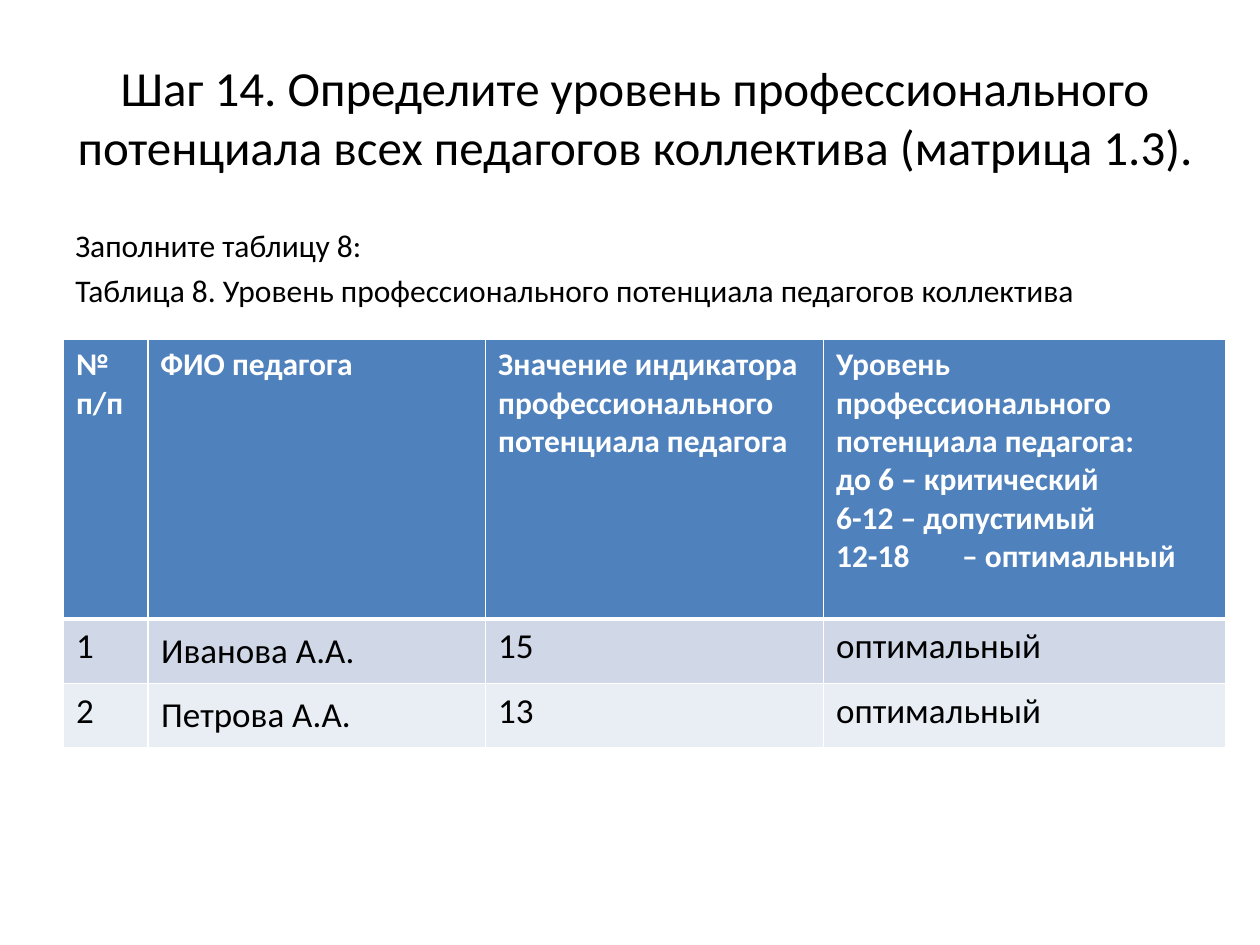
from lxml.etree import SubElement
from pptx import Presentation
from pptx.dml.color import RGBColor
from pptx.enum.text import MSO_ANCHOR, PP_ALIGN
from pptx.oxml.ns import qn
from pptx.util import Cm, Pt

FONT = "Calibri"
BLACK = RGBColor(0x00, 0x00, 0x00)
WHITE = RGBColor(0xFF, 0xFF, 0xFF)
HEADER_BLUE = RGBColor(0x4F, 0x81, 0xBD)
BAND_DARK = RGBColor(0xD0, 0xD8, 0xE8)
BAND_LIGHT = RGBColor(0xE9, 0xED, 0xF4)

TITLE = ("Шаг 14. Определите уровень профессионального "
         "потенциала всех педагогов коллектива (матрица 1.3).")
INTRO = [
    "Заполните таблицу 8:",
    "Таблица 8. Уровень профессионального потенциала педагогов коллектива",
]
HEADER = [
    "№ п/п",
    "ФИО педагога",
    "Значение индикатора профессионального потенциала педагога",
    "Уровень профессионального потенциала педагога:\n"
    "до 6 – критический\n6-12 – допустимый\n12-18\t– оптимальный",
]
TEACHERS = [
    ["1", "Иванова А.А.", "15", "оптимальный"],
    ["2", "Петрова А.А.", "13", "оптимальный"],
]
NAME_COLUMN = 1
COLUMN_WIDTHS = [Cm(1.7), Cm(6.81), Cm(6.81), Cm(8.1)]
HEADER_HEIGHT = Cm(5.64)
ROW_HEIGHT = Cm(1.3)


def style_paragraphs(text_frame, size, color, bold=False):
    for paragraph in text_frame.paragraphs:
        paragraph.font.name = FONT
        paragraph.font.size = Pt(size)
        paragraph.font.bold = bold
        paragraph.font.color.rgb = color


def add_text(slide, box, text, size):
    text_frame = slide.shapes.add_textbox(*box).text_frame
    text_frame.word_wrap = True
    text_frame.text = text
    style_paragraphs(text_frame, size, BLACK)
    return text_frame


def add_title(slide, box):
    text_frame = add_text(slide, box, TITLE, 28)
    text_frame.vertical_anchor = MSO_ANCHOR.MIDDLE
    text_frame.paragraphs[0].alignment = PP_ALIGN.CENTER


def add_intro(slide, box):
    text_frame = add_text(slide, box, "\n".join(INTRO), 18)
    for paragraph in text_frame.paragraphs:
        paragraph.space_before = Pt(3.6)


def set_borders(cell, bottom_width):
    """White lines on all four sides, placed before the cell's fill."""
    properties = cell._tc.get_or_add_tcPr()
    widths = {"a:lnL": 1, "a:lnR": 1, "a:lnT": 1, "a:lnB": bottom_width}
    for position, (tag, width) in enumerate(widths.items()):
        line = SubElement(properties, qn(tag), w=str(Pt(width)))
        fill = SubElement(line, qn("a:solidFill"))
        SubElement(fill, qn("a:srgbClr"), val=str(WHITE))
        properties.insert(position, line)


def add_level_table(slide, left, top):
    rows = [HEADER] + TEACHERS
    height = HEADER_HEIGHT + ROW_HEIGHT * len(TEACHERS)
    table = slide.shapes.add_table(
        len(rows), len(HEADER), left, top, sum(COLUMN_WIDTHS), height).table
    for column, width in zip(table.columns, COLUMN_WIDTHS):
        column.width = width

    for row_index, texts in enumerate(rows):
        is_header = row_index == 0
        table.rows[row_index].height = HEADER_HEIGHT if is_header else ROW_HEIGHT
        band = BAND_DARK if row_index % 2 else BAND_LIGHT
        for column_index, text in enumerate(texts):
            cell = table.cell(row_index, column_index)
            cell.text = text
            cell.fill.solid()
            cell.fill.fore_color.rgb = HEADER_BLUE if is_header else band
            if is_header:
                style_paragraphs(cell.text_frame, 18, WHITE, bold=True)
            else:
                style_paragraphs(cell.text_frame, 20, BLACK)
            # Teacher names sit in the middle of their row
            if column_index == NAME_COLUMN and not is_header:
                cell.vertical_anchor = MSO_ANCHOR.MIDDLE
                cell.margin_left = Cm(0.27)
                cell.margin_top = cell.margin_bottom = 0
            # A thicker line closes the header; the row below shares it
            set_borders(cell, bottom_width=3 if is_header else 1)
            if row_index == 1:
                cell._tc.tcPr.find(qn("a:lnT")).set("w", str(Pt(3)))


def main():
    presentation = Presentation()
    presentation.slide_width = Cm(25.4)
    presentation.slide_height = Cm(19.05)
    slide = presentation.slides.add_slide(presentation.slide_layouts[6])

    add_title(slide, (Cm(0.5), Cm(0.76), Cm(24.6), Cm(3.18)))
    add_intro(slide, (Cm(1.27), Cm(4.44), Cm(22.86), Cm(2)))
    add_level_table(slide, Cm(1.28), Cm(6.84))

    presentation.save("out.pptx")


if __name__ == "__main__":
    main()
